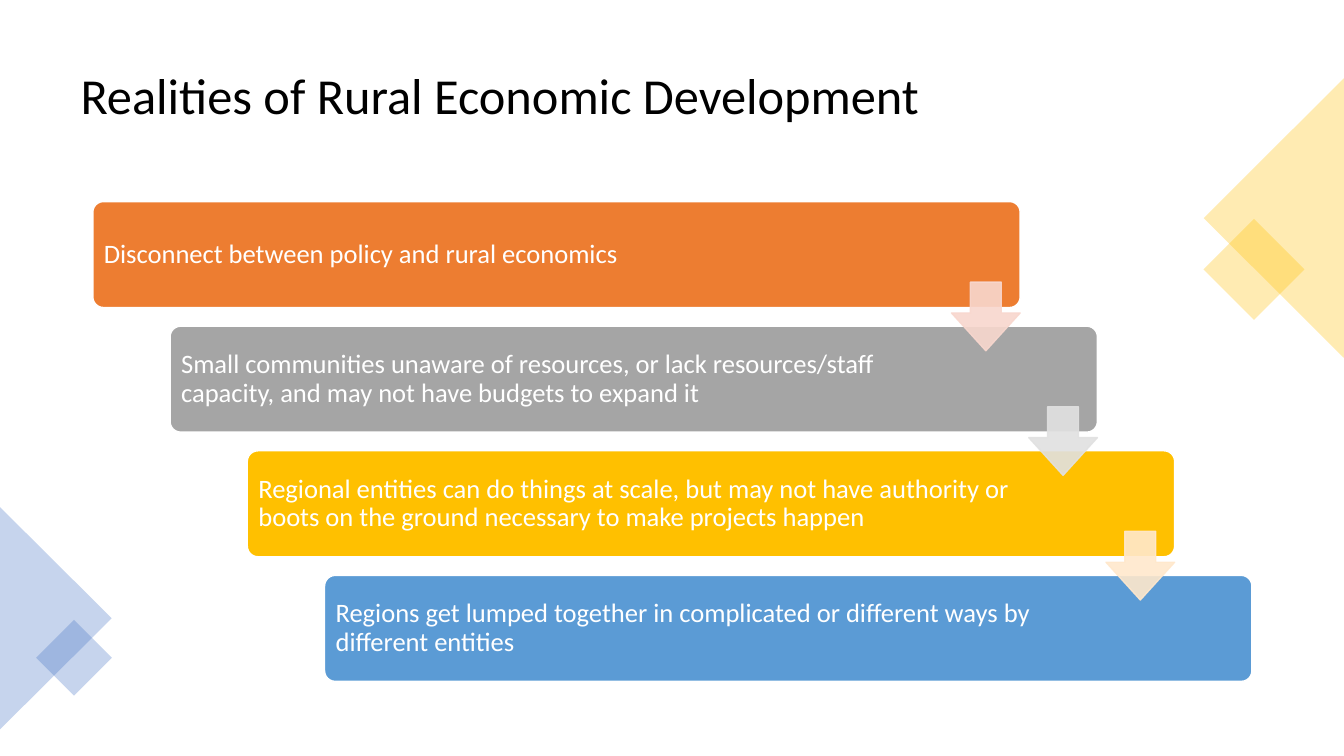
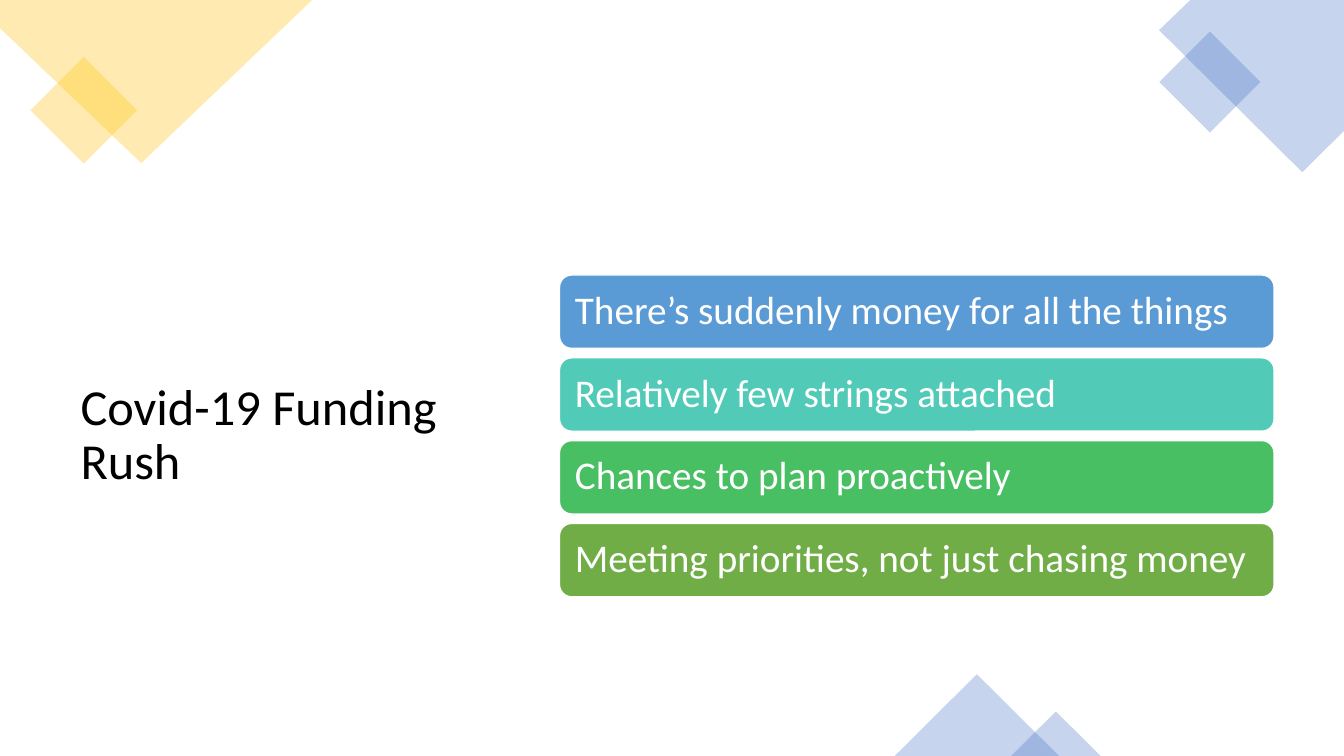
from dataclasses import dataclass
from typing import NamedTuple

import lxml.etree
import pptx
import pptx.dml.color
import pptx.enum.shapes
import pptx.enum.text
import pptx.oxml.ns
import pptx.util

Cm = pptx.util.Cm
SHAPE = pptx.enum.shapes.MSO_SHAPE
ANCHOR = pptx.enum.text.MSO_ANCHOR
ALIGN = pptx.enum.text.PP_ALIGN


class Box(NamedTuple):
    left: float
    top: float
    width: float
    height: float


@dataclass(frozen=True)
class Theme:
    font: str = "Calibri"
    title_size: int = 36
    cascade_size: int = 19
    list_size: int = 28
    black: str = "000000"
    white: str = "FFFFFF"
    gold: str = "FFC000"
    navy: str = "4472C4"
    orange: str = "ED7D31"
    grey: str = "A5A5A5"
    blue: str = "5B9BD5"
    teal: str = "52CAB8"
    green: str = "49BF64"
    olive: str = "70AD47"
    pale_orange: str = "F8D7CE"
    pale_grey: str = "E1E1E1"
    pale_gold: str = "FFE8CC"
    accent_opacity: int = 30
    arrow_opacity: int = 90


THEME = Theme()
PAGE_SIZE = (33.87, 19.05)


def rgb(color):
    return pptx.dml.color.RGBColor.from_string(color)


def set_attributes(target, values):
    for name, value in values.items():
        setattr(target, name, value)


def paint(shape, color, line_color=None, opacity=100):
    shape.shadow.inherit = False
    shape.fill.solid()
    shape.fill.fore_color.rgb = rgb(color)
    if line_color:
        shape.line.color.rgb = rgb(line_color)
        shape.line.width = pptx.util.Pt(1)
    else:
        shape.line.fill.background()
    if opacity < 100:
        tag = pptx.oxml.ns.qn("a:alpha")
        for node in shape._element.spPr.iter(pptx.oxml.ns.qn("a:srgbClr")):
            lxml.etree.SubElement(node, tag).set("val", str(opacity * 1000))


def add_shape(page, kind, box, color, line_color=None, opacity=100, rotation=0, adjustments=()):
    shape = page.shapes.add_shape(kind, *map(Cm, box))
    shape.rotation = rotation
    for index, value in enumerate(adjustments):
        shape.adjustments[index] = value
    paint(shape, color, line_color, opacity)
    return shape


def write(shape, text, size, color, margins):
    left, top, right, bottom = map(Cm, margins)
    frame = shape.text_frame
    set_attributes(frame, {
        "word_wrap": True,
        "vertical_anchor": ANCHOR.MIDDLE,
        "margin_left": left,
        "margin_top": top,
        "margin_right": right,
        "margin_bottom": bottom,
    })
    para = frame.paragraphs[0]
    set_attributes(para, {"alignment": ALIGN.LEFT, "line_spacing": 0.9})
    span = para.add_run()
    span.text = text
    set_attributes(span.font, {"name": THEME.font, "size": pptx.util.Pt(size)})
    span.font.color.rgb = rgb(color)


def add_title(page, box, text):
    title = page.shapes.add_textbox(*map(Cm, box))
    write(title, text, THEME.title_size, THEME.black, (0.25, 0.13, 0.25, 0.13))


def add_diamond(page, box, color):
    add_shape(page, SHAPE.RECTANGLE, box, color, opacity=THEME.accent_opacity, rotation=45)


def add_triangle(page, box, color, rotation=0):
    add_shape(page, SHAPE.ISOSCELES_TRIANGLE, box, color,
              opacity=THEME.accent_opacity, rotation=rotation)


def add_cut_corner(page, points, color):
    start, *rest = [(Cm(x), Cm(y)) for x, y in points]
    builder = page.shapes.build_freeform(*start, scale=1.0)
    builder.add_line_segments(rest, close=True)
    paint(builder.convert_to_shape(), color, opacity=THEME.accent_opacity)


def spread(box, count, width, height):
    across = (box.width - width) / (count - 1)
    down = (box.height - height) / (count - 1)
    return [Box(box.left + index * across, box.top + index * down, width, height)
            for index in range(count)]


def add_bars(page, bars, items, size, margins, adjustments=()):
    for bar, (text, color) in zip(bars, items):
        shape = add_shape(page, SHAPE.ROUNDED_RECTANGLE, bar, color, THEME.white,
                          adjustments=adjustments)
        write(shape, text, size, THEME.white, margins)


def add_cascade(page, box, items, arrow_colors):
    bars = spread(box, len(items), width=23.37, height=2.67)
    add_bars(page, bars, items, THEME.cascade_size, (0.2, 0.2, 3.86, 0.2), (0.1,))
    side = 1.73
    for bar, color in zip(bars, arrow_colors):
        arrow_box = Box(bar.left + bar.width - side, bar.top + 2.03, side, side)
        add_shape(page, SHAPE.DOWN_ARROW, arrow_box, color, color,
                  opacity=THEME.arrow_opacity, adjustments=(0.45, 0.55))


def add_list(page, box, items):
    bars = spread(box, len(items), width=box.width, height=1.85)
    add_bars(page, bars, items, THEME.list_size, (0.3, 0.3, 0.3, 0.3))


def build_realities(page):
    add_title(page, Box(1.78, 0.89, 30.3, 3.15), "Realities of Rural Economic Development")
    add_diamond(page, Box(30.7, 5.89, 1.8, 1.8), THEME.gold)
    add_triangle(page, Box(28.58, 3.73, 7.04, 3.53), THEME.gold, 270)
    add_triangle(page, Box(-1.4, 14.17, 5.61, 2.82), THEME.navy, 90)
    add_diamond(page, Box(1.19, 15.9, 1.35, 1.35), THEME.navy)
    items = [
        ("Disconnect between policy and rural economics", THEME.orange),
        ("Small communities unaware of resources, or lack resources/staff capacity, "
         "and may not have budgets to expand it", THEME.grey),
        ("Regional entities can do things at scale, but may not have authority or "
         "boots on the ground necessary to make projects happen", THEME.gold),
        ("Regions get lumped together in complicated or different ways by "
         "different entities", THEME.blue),
    ]
    add_cascade(page, Box(2.34, 5.08, 29.21, 12.09), items,
                (THEME.pale_orange, THEME.pale_grey, THEME.pale_gold))


def build_funding(page):
    add_title(page, Box(1.78, 4.72, 11, 12.55), "Covid-19 Funding Rush")
    add_diamond(page, Box(1.16, 1.83, 1.9, 1.9), THEME.gold)
    add_cut_corner(page, [(0, 0), (7.87, 0), (3.56, 4.11), (0, 0.71)], THEME.gold)
    right = PAGE_SIZE[0]
    add_cut_corner(page, [(30, 0), (right, 0), (right, 3.3), (32.82, 4.34), (29.21, 0.76)],
                   THEME.navy)
    add_diamond(page, Box(29.59, 1.17, 1.8, 1.8), THEME.navy)
    add_triangle(page, Box(22.55, 16.99, 4.14, 2.06), THEME.navy)
    add_triangle(page, Box(25.48, 17.93, 2.26, 1.12), THEME.navy)
    items = [
        ("There’s suddenly money for all the things", THEME.blue),
        ("Relatively few strings attached", THEME.teal),
        ("Chances to plan proactively", THEME.green),
        ("Meeting priorities, not just chasing money", THEME.olive),
    ]
    add_list(page, Box(14.1, 6.93, 18.01, 8.11), items)


def main():
    deck = pptx.Presentation()
    deck.slide_width, deck.slide_height = map(Cm, PAGE_SIZE)
    for build in (build_realities, build_funding):
        build(deck.slides.add_slide(deck.slide_layouts[6]))
    deck.save("out.pptx")


if __name__ == "__main__":
    main()
